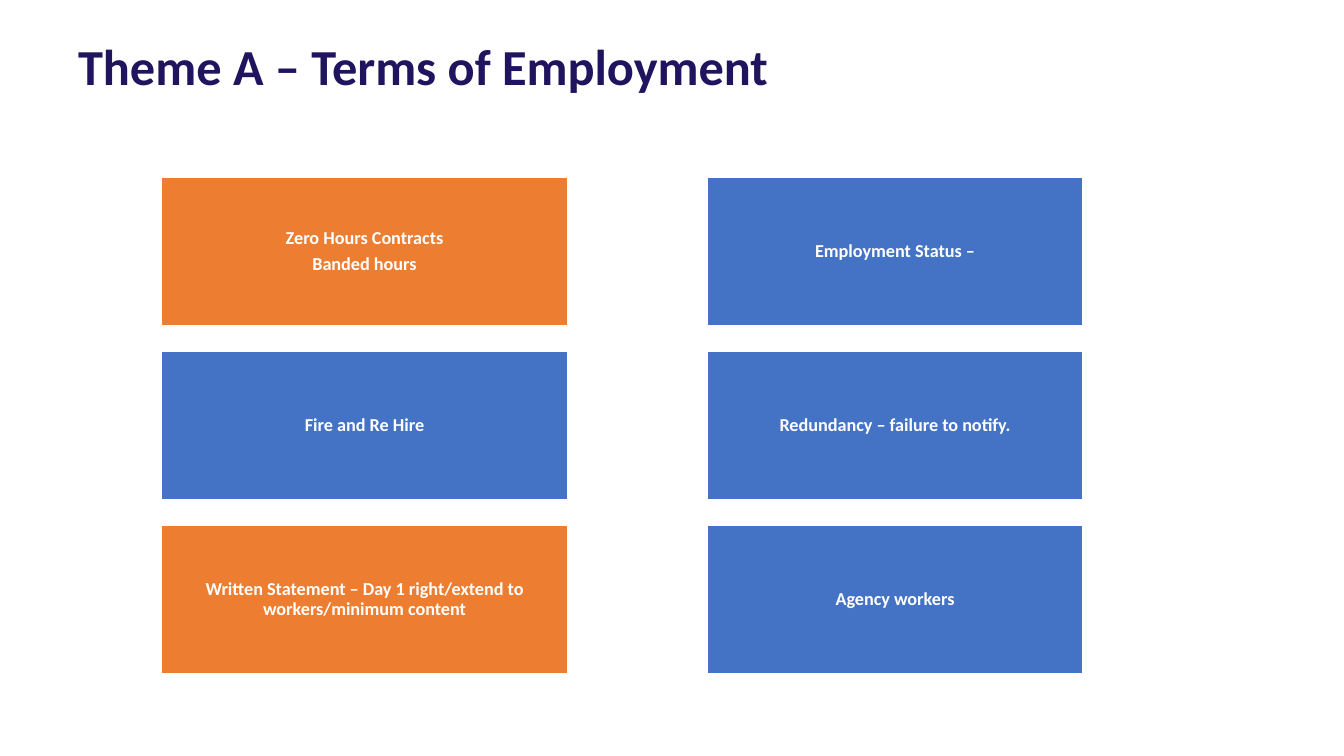
import pptx
import pptx.dml.color
import pptx.enum.shapes
import pptx.enum.text
import pptx.util

EMU_PER_PX = 914400 / 100.8
TITLE_ONLY_LAYOUT = 5


def px(length):
    return pptx.util.Emu(round(length * EMU_PER_PX))


def color(hex_string):
    return pptx.dml.color.RGBColor.from_string(hex_string)


def apply_format(target, values):
    for name, value in values.items():
        setattr(target, name, value)


class SlideBuilder:
    title_font = {"name": "Calibri", "size": pptx.util.Pt(36), "bold": True}
    title_color = "20145E"
    title_frame = {
        "word_wrap": True,
        "auto_size": pptx.enum.text.MSO_AUTO_SIZE.NONE,
        "vertical_anchor": pptx.enum.text.MSO_ANCHOR.TOP,
    }
    title_paragraph = {
        "alignment": pptx.enum.text.PP_ALIGN.LEFT,
        "space_after": pptx.util.Pt(6),
    }
    card_font = {"name": "Calibri", "size": pptx.util.Pt(13), "bold": True}
    card_color = "FFFFFF"
    card_frame = {
        "word_wrap": True,
        "vertical_anchor": pptx.enum.text.MSO_ANCHOR.MIDDLE,
        "margin_left": px(5),
        "margin_right": px(5),
        "margin_top": px(5),
        "margin_bottom": px(5),
    }
    card_paragraph = {
        "alignment": pptx.enum.text.PP_ALIGN.CENTER,
        "line_spacing": 0.9,
        "space_after": pptx.util.Pt(4.5),
    }

    def __init__(self, presentation):
        layout = presentation.slide_layouts[TITLE_ONLY_LAYOUT]
        self.slide = presentation.slides.add_slide(layout)

    def set_text(self, shape, text, frame, paragraph_format, font, font_color):
        shape.text_frame.text = text
        apply_format(shape.text_frame, frame)
        for paragraph in shape.text_frame.paragraphs:
            apply_format(paragraph, paragraph_format)
            apply_format(paragraph.font, font)
            paragraph.font.color.rgb = color(font_color)

    def title(self, text, left, top, width, height):
        shape = self.slide.shapes.title
        apply_format(shape, {"left": px(left), "top": px(top),
                             "width": px(width), "height": px(height)})
        self.set_text(shape, text, self.title_frame, self.title_paragraph,
                      self.title_font, self.title_color)

    def card(self, text, left, top, width, height, fill):
        shape = self.slide.shapes.add_shape(
            pptx.enum.shapes.MSO_SHAPE.RECTANGLE,
            px(left), px(top), px(width), px(height))
        shape.shadow.inherit = False
        shape.fill.solid()
        shape.fill.fore_color.rgb = color(fill)
        shape.line.color.rgb = color("FFFFFF")
        shape.line.width = pptx.util.Pt(1)
        self.set_text(shape, text, self.card_frame, self.card_paragraph,
                      self.card_font, self.card_color)


def main():
    presentation = pptx.Presentation()
    presentation.slide_width = px(1344)
    presentation.slide_height = px(756)
    builder = SlideBuilder(presentation)
    builder.title("Theme A – Terms of Employment", 68, 30, 1210, 86)

    orange, blue = "ED7D31", "4472C4"
    columns = [(161, 407), (707, 376)]
    first_top, row_pitch, card_height = 177, 174, 149
    topics = [
        [("Zero Hours Contracts\nBanded hours", orange),
         ("Employment Status –", blue)],
        [("Fire and Re Hire", blue),
         ("Redundancy – failure to notify.", blue)],
        [("Written Statement – Day 1 right/extend to workers/minimum content", orange),
         ("Agency workers", blue)],
    ]
    for row, row_topics in enumerate(topics):
        top = first_top + row * row_pitch
        for (left, width), (text, fill) in zip(columns, row_topics):
            builder.card(text, left, top, width, card_height, fill)

    presentation.save("out.pptx")


if __name__ == "__main__":
    main()
